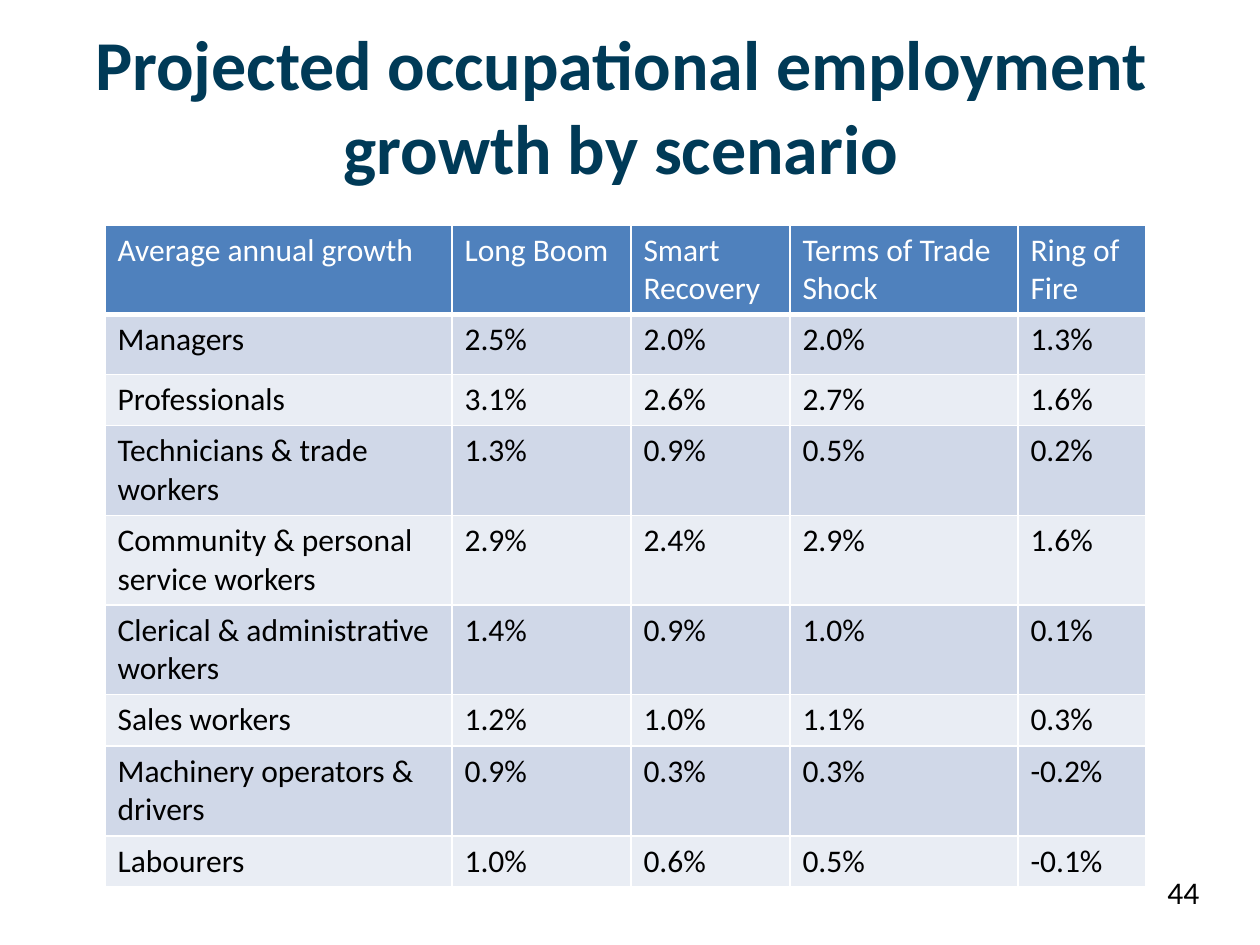
"""Build the slide on projected occupational employment growth by scenario."""
import dataclasses
import typing

import pptx
import pptx.dml.color
import pptx.enum.text
import pptx.oxml
import pptx.oxml.ns
import pptx.util

RGBColor = pptx.dml.color.RGBColor
NAVY = RGBColor(0x00, 0x3A, 0x57)
BLUE = RGBColor(0x4F, 0x81, 0xBD)
DARK_BAND = RGBColor(0xD0, 0xD8, 0xE8)
LIGHT_BAND = RGBColor(0xE9, 0xED, 0xF4)
WHITE = RGBColor(0xFF, 0xFF, 0xFF)
BLACK = RGBColor(0x00, 0x00, 0x00)

EMU_PER_PX = 914400 // 126
TITLE_FONT = {"name": "Calibri", "size": pptx.util.Pt(40), "bold": True}
TEXT_FONT = {"name": "Calibri", "size": pptx.util.Pt(18), "bold": False}
COLUMN_WIDTHS = (347, 179, 159, 228, 128)


@dataclasses.dataclass(frozen=True)
class Box:
    """Place of an element in px."""
    left: int
    top: int
    width: int
    height: int

    def emu(self) -> dict[str, int]:
        return {side: px(length) for side, length in dataclasses.asdict(self).items()}


@dataclasses.dataclass(frozen=True)
class GrowthRow:
    """One table row: its height in px, its label and its scenario values."""
    height: int
    label: str
    values: tuple[str, ...]


GROWTH = (
    GrowthRow(89, "Average annual growth",
              ("Long Boom", "Smart Recovery", "Terms of Trade Shock", "Ring of Fire")),
    GrowthRow(60, "Managers", ("2.5%", "2.0%", "2.0%", "1.3%")),
    GrowthRow(51, "Professionals", ("3.1%", "2.6%", "2.7%", "1.6%")),
    GrowthRow(90, "Technicians & trade workers", ("1.3%", "0.9%", "0.5%", "0.2%")),
    GrowthRow(89, "Community & personal service workers", ("2.9%", "2.4%", "2.9%", "1.6%")),
    GrowthRow(89, "Clerical & administrative workers", ("1.4%", "0.9%", "1.0%", "0.1%")),
    GrowthRow(51, "Sales workers", ("1.2%", "1.0%", "1.1%", "0.3%")),
    GrowthRow(90, "Machinery operators & drivers", ("0.9%", "0.3%", "0.3%", "-0.2%")),
    GrowthRow(51, "Labourers", ("1.0%", "0.6%", "0.5%", "-0.1%")),
)
TITLE_BOX = Box(54, 26, 1134, 158)
TABLE_BOX = Box(105, 225, sum(COLUMN_WIDTHS), sum(row.height for row in GROWTH))
NUMBER_BOX = Box(1155, 867, 105, 78)


def px(length: int) -> int:
    return length * EMU_PER_PX


def set_all(target: typing.Any, values: dict[str, typing.Any]) -> None:
    for attribute, value in values.items():
        setattr(target, attribute, value)


def write(frame: typing.Any, text: str, font: dict[str, typing.Any], color: RGBColor) -> None:
    frame.text = text
    run_font = frame.paragraphs[0].runs[0].font
    set_all(run_font, font)
    run_font.color.rgb = color


def add_borders(cell: typing.Any, bottom_pt: int) -> None:
    properties = cell._tc.get_or_add_tcPr()
    for position, (side, points) in enumerate(
            {"L": 1, "R": 1, "T": 1, "B": bottom_pt}.items()):
        line = pptx.oxml.parse_xml(
            f'<a:ln{side} {pptx.oxml.ns.nsdecls("a")} w="{pptx.util.Pt(points)}">'
            f'<a:solidFill><a:srgbClr val="{WHITE}"/></a:solidFill></a:ln{side}>')
        properties.insert(position, line)


def add_growth_table(slide: typing.Any) -> None:
    table = slide.shapes.add_table(
        len(GROWTH), len(COLUMN_WIDTHS), **TABLE_BOX.emu()).table
    for column, width in zip(table.columns, COLUMN_WIDTHS):
        column.width = px(width)
    for index, growth in enumerate(GROWTH):
        is_header = index == 0
        band = BLUE if is_header else DARK_BAND if index % 2 else LIGHT_BAND
        table.rows[index].height = px(growth.height)
        for cell, text in zip(table.rows[index].cells, (growth.label, *growth.values)):
            write(cell.text_frame, text, TEXT_FONT, WHITE if is_header else BLACK)
            cell.fill.solid()
            cell.fill.fore_color.rgb = band
            add_borders(cell, 3 if is_header else 1)


def add_title(slide: typing.Any) -> None:
    title = slide.shapes.title
    set_all(title, TITLE_BOX.emu())
    set_all(title.text_frame, {
        "word_wrap": True,
        "auto_size": pptx.enum.text.MSO_AUTO_SIZE.NONE,
        "vertical_anchor": pptx.enum.text.MSO_ANCHOR.MIDDLE,
    })
    write(title.text_frame, "Projected occupational employment growth by scenario",
          TITLE_FONT, NAVY)
    title.text_frame.paragraphs[0].alignment = pptx.enum.text.PP_ALIGN.CENTER


def add_page_number(slide: typing.Any) -> None:
    frame = slide.shapes.add_textbox(**NUMBER_BOX.emu()).text_frame
    frame.word_wrap = True
    write(frame, "44", TEXT_FONT, BLACK)


def main() -> None:
    presentation = pptx.Presentation()
    set_all(presentation, {"slide_width": pptx.util.Inches(10),
                           "slide_height": pptx.util.Inches(7.5)})
    slide = presentation.slides.add_slide(presentation.slide_layouts[5])
    add_title(slide)
    add_growth_table(slide)
    add_page_number(slide)
    presentation.save("out.pptx")


if __name__ == "__main__":
    main()
